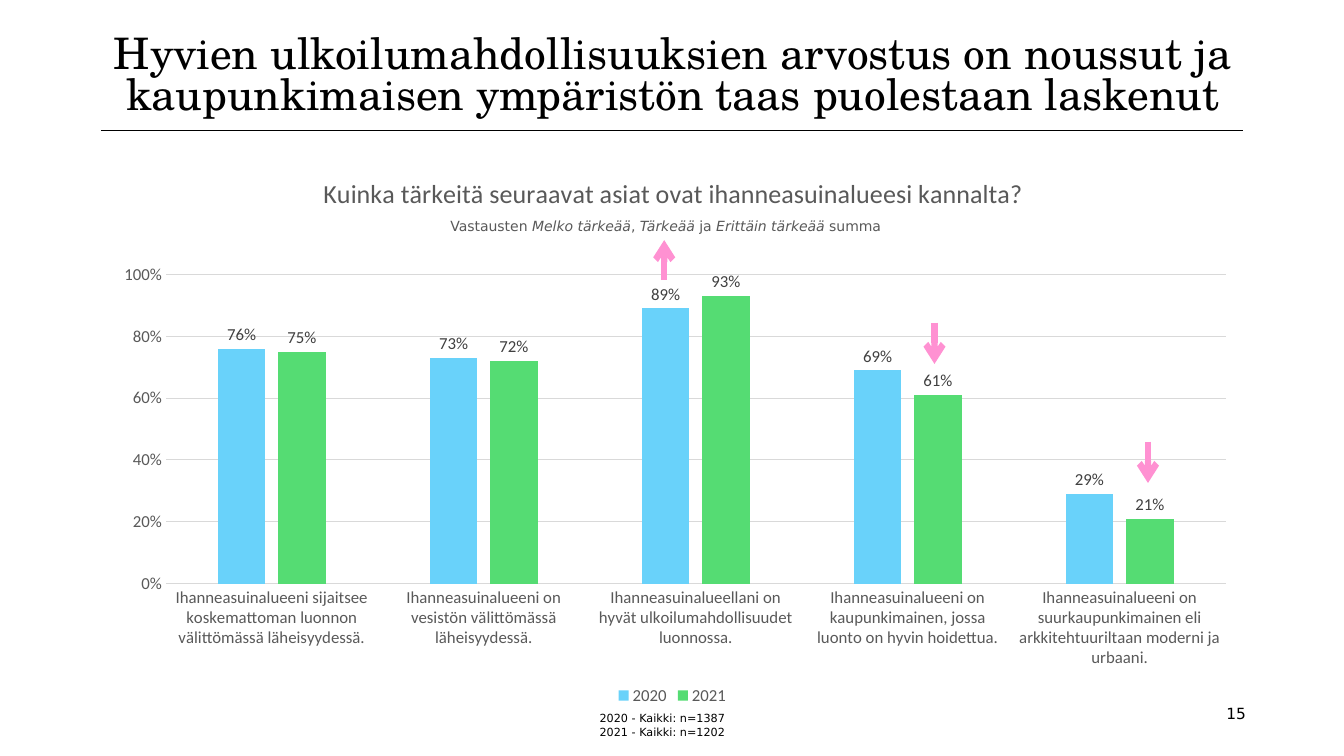
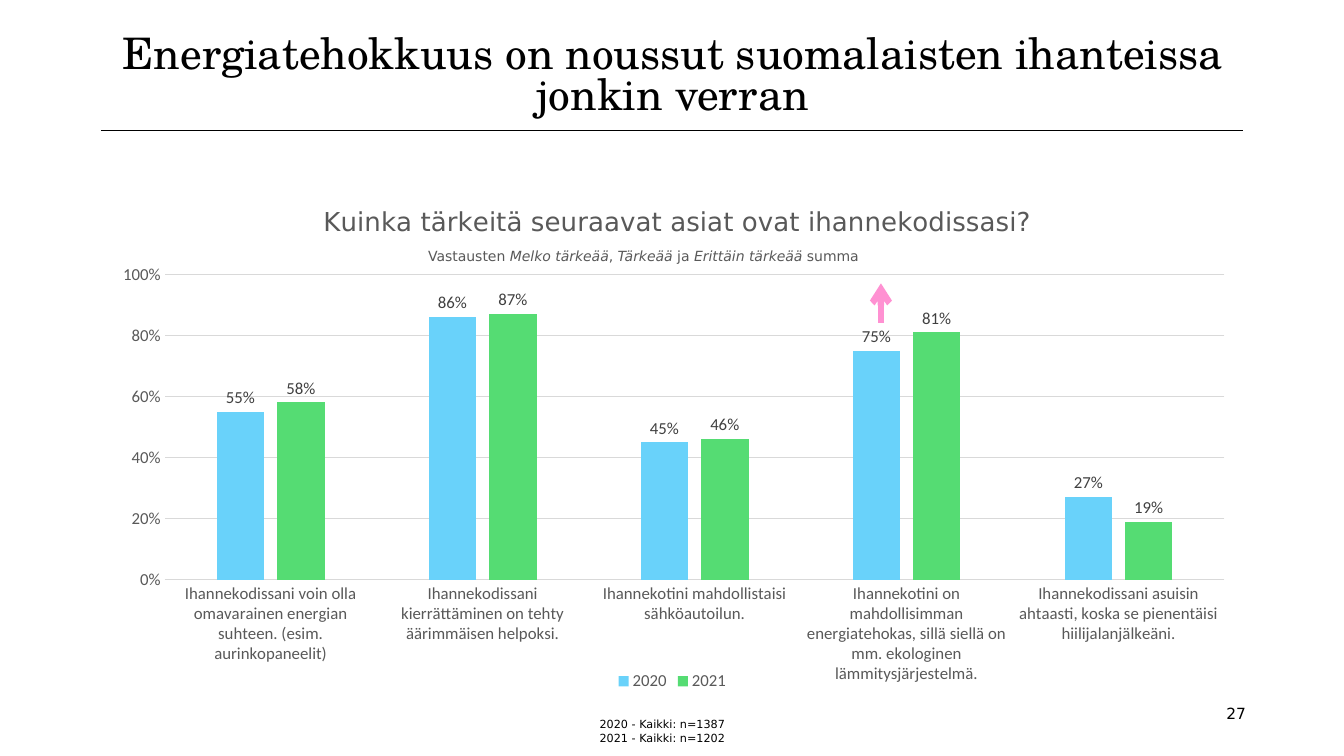
from pptx import Presentation
from pptx.chart.data import CategoryChartData
from pptx.dml.color import RGBColor
from pptx.enum.chart import (XL_CHART_TYPE as ChartType, XL_LABEL_POSITION as LabelPosition,
                             XL_LEGEND_POSITION as LegendPosition, XL_TICK_MARK as TickMark)
from pptx.enum.shapes import MSO_CONNECTOR as Connector
from pptx.enum.text import MSO_ANCHOR as Anchor, MSO_AUTO_SIZE as AutoSize, PP_ALIGN as Align
from pptx.oxml.ns import qn
from pptx.util import Cm, Pt
from lxml.etree import SubElement

BLACK, GREY, DARK_GREY, LIGHT_GREY, PINK = "000000", "595959", "404040", "D9D9D9", "FF91D2"
SERIES_COLOURS = ["69D2FA", "55DC73"]
TITLE_FONT, BODY_FONT, CHART_FONT = "TeX Gyre Schola", "DejaVu Sans", "Calibri"
LEFT, WIDTH = 2.57, 28.75

SUBTITLE = [("Vastausten ", False), ("Melko tärkeää", True), (", ", False), ("Tärkeää ", True),
            ("ja ", False), ("Erittäin tärkeää ", True), ("summa", False)]
SAMPLE_SIZES = ["2020 - Kaikki: n=1387", "2021 - Kaikki: n=1202"]

PAGES = [
    {
        "title": "Hyvien ulkoilumahdollisuuksien arvostus on noussut ja "
                 "kaupunkimaisen ympäristön taas puolestaan laskenut",
        "number": "15",
        "question": "Kuinka tärkeitä seuraavat asiat ovat ihanneasuinalueesi kannalta?",
        "question_font": CHART_FONT,
        "chart": (3.73, 14.15),
        "plot": (0.056, 0.225, 0.929, 0.551),
        "subtitle": (11.1, 5.36),
        "sample_top": 17.81,
        "rows": [
            ("Ihanneasuinalueeni sijaitsee koskemattoman luonnon välittömässä läheisyydessä.", 0.76, 0.75),
            ("Ihanneasuinalueeni on vesistön välittömässä läheisyydessä.", 0.73, 0.72),
            ("Ihanneasuinalueellani on hyvät ulkoilumahdollisuudet luonnossa.", 0.89, 0.93),
            ("Ihanneasuinalueeni on kaupunkimainen, jossa luonto on hyvin hoidettua.", 0.69, 0.61),
            ("Ihanneasuinalueeni on suurkaupunkimainen eli arkkitehtuuriltaan moderni ja urbaani.", 0.29, 0.21),
        ],
        "arrows": [(16.74, 7.06, 6.05), (23.55, 8.13, 9.17), (28.93, 11.13, 12.17)],
    },
    {
        "title": "Energiatehokkuus on noussut suomalaisten ihanteissa jonkin verran",
        "number": "27",
        "question": "Kuinka tärkeitä seuraavat asiat ovat ihannekodissasi?",
        "question_font": BODY_FONT,
        "chart": (4.52, 13),
        "plot": (0.055, 0.184, 0.929, 0.592),
        "subtitle": (10.54, 6.12),
        "sample_top": 17.96,
        "rows": [
            ("Ihannekodissani voin olla omavarainen energian suhteen. (esim. aurinkopaneelit)", 0.55, 0.58),
            ("Ihannekodissani kierrättäminen on tehty äärimmäisen helpoksi.", 0.86, 0.87),
            ("Ihannekotini mahdollistaisi sähköautoilun.", 0.45, 0.46),
            ("Ihannekotini on mahdollisimman energiatehokas, sillä siellä on mm. ekologinen "
             "lämmitysjärjestelmä.", 0.75, 0.81),
            ("Ihannekodissani asuisin ahtaasti, koska se pienentäisi hiilijalanjälkeäni.", 0.27, 0.19),
        ],
        "arrows": [(22.2, 8.13, 7.14)],
    },
]


def rgb(colour):
    return RGBColor.from_string(colour)


def style_font(font, size, colour, name):
    font.size, font.name, font.bold = Pt(size), name, False
    font.color.rgb = rgb(colour)


def add_text(page, place, paragraphs, size, colour, name, align=Align.LEFT, anchor=Anchor.TOP, space=0):
    box = page.shapes.add_textbox(*map(Cm, place))
    frame = box.text_frame
    frame.word_wrap, frame.vertical_anchor = True, anchor
    frame.text = "\n".join(paragraphs)
    for para in frame.paragraphs:
        para.alignment = align
        para.space_before = para.space_after = Pt(space)
        for span in para.runs:
            style_font(span.font, size, colour, name)
    return frame


def add_line(page, start, end, colour, width):
    line = page.shapes.add_connector(Connector.STRAIGHT, *map(Cm, start + end))
    line.line.width = Pt(width)
    line.line.color.rgb = rgb(colour)
    SubElement(line.element.spPr, qn("a:effectLst"))
    return line


def add_arrow(page, x, start, end):
    arrow = add_line(page, (x, start), (x, end), PINK, 4.5)
    SubElement(arrow.element.spPr.find(qn("a:ln")), qn("a:tailEnd"), type="arrow")


def set_layout(parent, index, settings):
    for old in parent.findall(qn("c:layout")):
        parent.remove(old)
    layout = SubElement(parent, qn("c:layout"))
    parent.insert(index, layout)
    manual = SubElement(layout, qn("c:manualLayout"))
    for tag, value in settings:
        SubElement(manual, qn(f"c:{tag}"), val=str(value))


def style_axes(chart):
    for axis in (chart.category_axis, chart.value_axis):
        axis.major_tick_mark = axis.minor_tick_mark = TickMark.NONE
        style_font(axis.tick_labels.font, 12, GREY, CHART_FONT)
    values = chart.value_axis
    values.minimum_scale, values.maximum_scale, values.major_unit = 0, 1, 0.2
    values.tick_labels.number_format = "0%"
    values.tick_labels.number_format_is_linked = False
    values.format.line.fill.background()
    for line in (chart.category_axis.format.line, values.major_gridlines.format.line):
        line.width = Pt(0.75)
        line.color.rgb = rgb(LIGHT_GREY)


def style_bars(chart):
    bars = chart.plots[0]
    bars.gap_width, bars.overlap, bars.vary_by_categories = 219, -27, False
    for series, colour in zip(bars.series, SERIES_COLOURS):
        series.format.fill.solid()
        series.format.fill.fore_color.rgb = rgb(colour)
        labels = series.data_labels
        labels.show_value, labels.position = True, LabelPosition.OUTSIDE_END
        labels.number_format, labels.number_format_is_linked = "0%", False
        style_font(labels.font, 12, DARK_GREY, CHART_FONT)


def add_bar_chart(page, content):
    categories, *columns = zip(*content["rows"])
    data = CategoryChartData(number_format="0%")
    data.categories = categories
    for year, values in zip(("2020", "2021"), columns):
        data.add_series(year, values)
    top, height = content["chart"]
    chart = page.shapes.add_chart(ChartType.COLUMN_CLUSTERED, Cm(LEFT), Cm(top),
                                  Cm(WIDTH), Cm(height), data).chart
    style_font(chart.font, 10, BLACK, CHART_FONT)
    chart.has_title = True
    question = chart.chart_title.text_frame
    question.text = content["question"]
    style_font(question.paragraphs[0].runs[0].font, 18.6, GREY, content["question_font"])
    chart.has_legend = True
    chart.legend.position, chart.legend.include_in_layout = LegendPosition.BOTTOM, False
    style_font(chart.legend.font, 12, GREY, CHART_FONT)
    style_axes(chart)
    style_bars(chart)

    body = chart._chartSpace.find(qn("c:chart"))
    edges = [("xMode", "edge"), ("yMode", "edge")]
    set_layout(body.find(qn("c:title")), 1, edges + [("x", 0.19), ("y", 0.04)])
    set_layout(body.find(qn("c:plotArea")), 0,
               [("layoutTarget", "inner")] + edges + list(zip("xywh", content["plot"])))


def add_subtitle(page, place):
    frame = add_text(page, place + (11.66, 0.69), [""], 10, GREY, BODY_FONT)
    frame.word_wrap, frame.auto_size = False, AutoSize.SHAPE_TO_FIT_TEXT
    for words, italic in SUBTITLE:
        span = frame.paragraphs[0].add_run()
        span.text = words
        style_font(span.font, 10, GREY, BODY_FONT)
        span.font.italic = italic


def add_page(deck, content):
    page = deck.slides.add_slide(deck.slide_layouts[6])
    add_line(page, (2.54, 3.28), (31.32, 3.28), BLACK, 0.5)
    add_text(page, (22.68, 17.58, 8.97, 0.79), [content["number"]], 11, BLACK, BODY_FONT,
             Align.RIGHT, Anchor.MIDDLE, 10)
    add_bar_chart(page, content)
    title = add_text(page, (LEFT, 0.74, WIDTH, 2.26), [content["title"]], 31, BLACK, TITLE_FONT,
                     Align.CENTER, Anchor.BOTTOM, 10)
    title.margin_left = title.margin_right = title.margin_top = title.margin_bottom = 0
    title.paragraphs[0].line_spacing = 0.8
    sample = add_text(page, (14.86, content["sample_top"], 4.17, 1.27), SAMPLE_SIZES, 8, BLACK, BODY_FONT)
    sample.auto_size = AutoSize.SHAPE_TO_FIT_TEXT
    add_subtitle(page, content["subtitle"])
    for arrow in content["arrows"]:
        add_arrow(page, *arrow)


def main():
    deck = Presentation()
    deck.slide_width, deck.slide_height = Cm(33.87), Cm(19.05)
    for content in PAGES:
        add_page(deck, content)
    deck.save("out.pptx")


if __name__ == "__main__":
    main()
